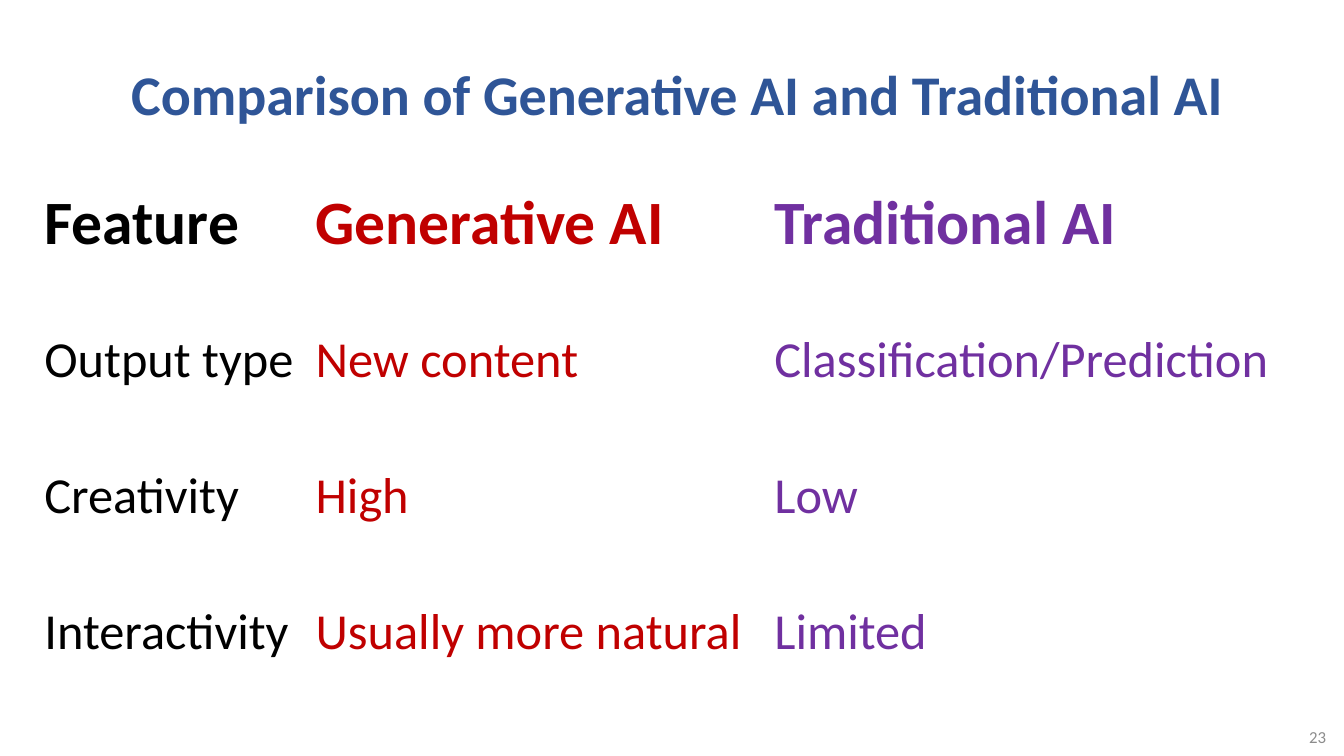
"""Build a slide that compares generative AI with traditional AI."""
from pptx import Presentation
from pptx.dml.color import RGBColor
from pptx.enum.text import MSO_ANCHOR, PP_ALIGN
from pptx.util import Inches, Pt

MIDDLE = MSO_ANCHOR.MIDDLE
CENTER, RIGHT = PP_ALIGN.CENTER, PP_ALIGN.RIGHT
TITLE_ONLY = 5

HUES = ["000000", "C00000", "7030A0"]
WIDTHS = [2.69, 4.55, 5.46]
HEIGHTS = [1.1, 1.6, 1.1, 1.6]
ROWS = [
    ["Feature", "Generative AI", "Traditional AI"],
    ["Output type", "New content", "Classification/Prediction"],
    ["Creativity", "High", "Low"],
    ["Interactivity", "Usually more natural", "Limited"],
]


def write(frame, text, size, color, bold=False, align=None):
    frame.text = text
    frame.word_wrap = True
    frame.vertical_anchor = MIDDLE
    para = frame.paragraphs[0]
    para.alignment = align
    font = para.font
    font.name = "Calibri"
    font.size = Pt(size)
    font.bold = bold
    font.color.rgb = RGBColor.from_string(color)


deck = Presentation()
deck.slide_width, deck.slide_height = Inches(13.33), Inches(7.5)
slide = deck.slides.add_slide(deck.slide_layouts[TITLE_ONLY])

frame = slide.shapes.add_table(
    len(ROWS), len(WIDTHS), Inches(0.34), Inches(1.67),
    Inches(sum(WIDTHS)), Inches(sum(HEIGHTS)))
table = frame.table
table.first_row = table.horz_banding = False
for column, width in zip(table.columns, WIDTHS):
    column.width = Inches(width)
for r, (height, words) in enumerate(zip(HEIGHTS, ROWS)):
    table.rows[r].height = Inches(height)
    for c, (word, hue) in enumerate(zip(words, HUES)):
        cell = table.cell(r, c)
        cell.fill.background()
        write(cell.text_frame, word, 36 if r else 44, hue, bold=r == 0)
        cell.vertical_anchor = MIDDLE

number = slide.shapes.add_textbox(
    Inches(12.2), Inches(7.18), Inches(1.05), Inches(0.26))
write(number.text_frame, "23", 12, "8C8C8C", align=RIGHT)

title = slide.shapes.title
title.left, title.top = Inches(0.58), Inches(0.15)
title.width, title.height = Inches(12.27), Inches(1.55)
write(title.text_frame, "Comparison of Generative AI and Traditional AI",
      40, "2F5597", bold=True, align=CENTER)

deck.save("out.pptx")
